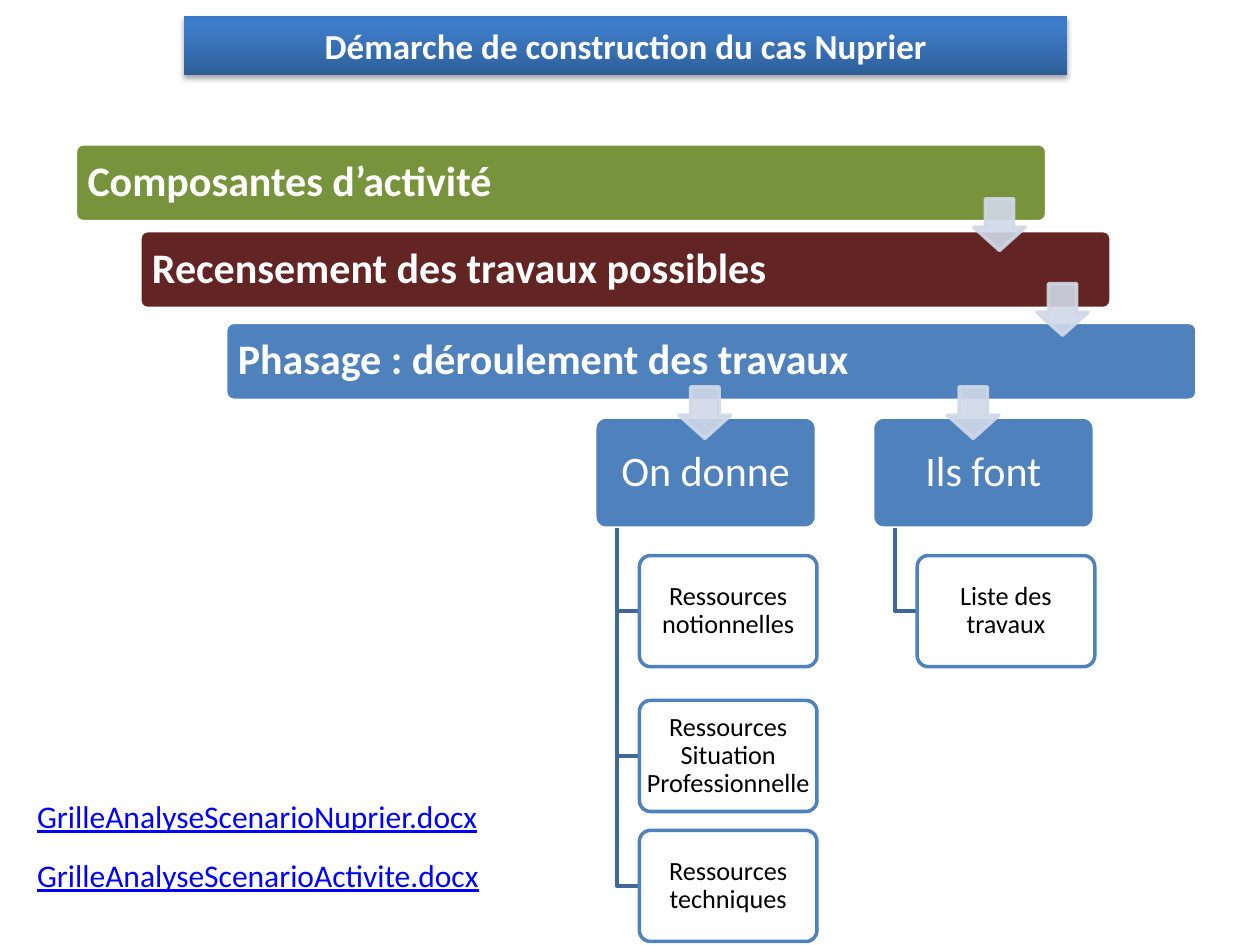
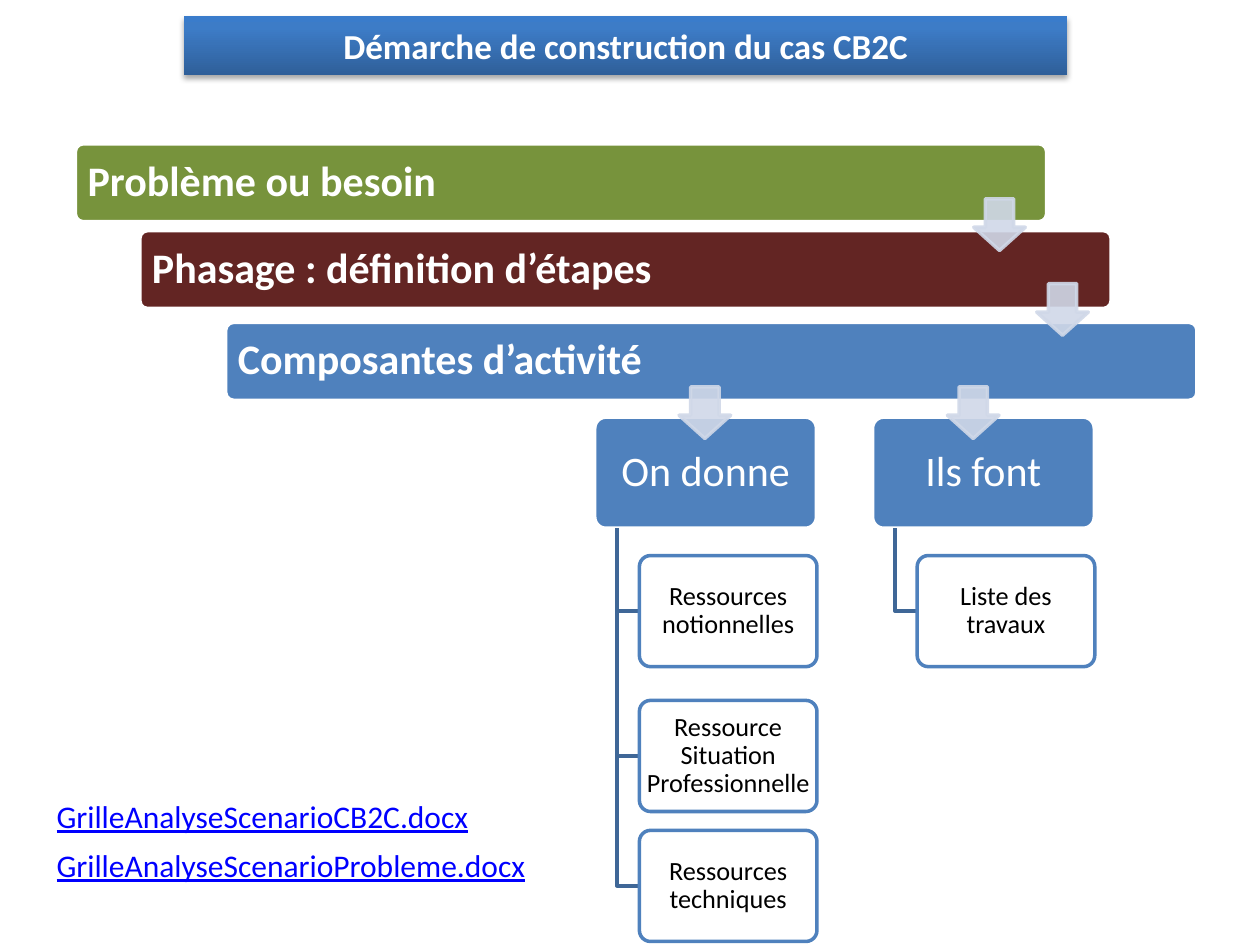
"""Two slides showing the steps for building a teaching case."""
from lxml import etree
from pptx import Presentation, util as u
from pptx.dml.color import RGBColor
from pptx.enum import shapes, text
from pptx.oxml import ns

PAGES = [
    {
        "title": "Démarche de construction du cas Nuprier",
        "steps": ["Composantes d’activité", "Recensement des travaux possibles",
                  "Phasage : déroulement des travaux"],
        "situation": "Ressources Situation Professionnelle",
        "links": ["GrilleAnalyseScenarioNuprier.docx", "GrilleAnalyseScenarioActivite.docx"],
        "links_left": 0.5, "links_pitch": 1.19,
    },
    {
        "title": "Démarche de construction du cas CB2C",
        "steps": ["Problème ou besoin", "Phasage : définition d’étapes",
                  "Composantes d’activité"],
        "situation": "Ressource Situation Professionnelle",
        "links": ["GrilleAnalyseScenarioCB2C.docx", "GrilleAnalyseScenarioProbleme.docx"],
        "links_left": 0.89, "links_pitch": 0.99,
    },
]


def branches(situation):
    return [("On donne", ["Ressources notionnelles", situation, "Ressources techniques"]),
            ("Ils font", ["Liste des travaux"])]


class Theme:
    font = "Calibri"
    white, black, link = "FFFFFF", "000000", "0000FF"
    blue, elbow, arrow = "4F81BD", "3F6797", "D0D8E8"
    steps = ["77933C", "632523", "4F81BD"]
    title_stops = [(0, "2F5F99"), (80, "3D7CC7"), (100, "3A7CCB")]
    step_size, title_size, link_size, leaf_size = 24, 20, 18, 15
    line_width, opacity = 2, 90


TITLE = (3.71, 0.33, 17.81, 1.19)
STEP_PLACES = [(1.52, 2.9), (2.82, 4.65), (4.55, 6.5)]
STEP_SIZE = (19.58, 1.57)
ARROW_PLACES = [(19.63, 4.01), (20.9, 5.72), (13.69, 7.8), (19.1, 7.8)]
ARROW_SIZE = 1.04
HEAD_LEFT, HEAD_TOP, HEAD_PITCH = 11.99, 8.41, 5.6
HEAD_SIZE = (4.47, 2.24)
LEAF_TOPS = [11.2, 14.12, 16.74]
LEAF_SIZE = (3.58, 2.24)
LEAF_INDENT, TRUNK_INDENT = 0.9, 0.45
LINKS_TOP, LINK_SIZE = 15.93, (10, 1.03)
STEP_MARGIN = 0.2
KIND = shapes.MSO_SHAPE


def apply(target, values):
    for name, value in values.items():
        setattr(target, name, value)


def add_child(parent, tag, **attributes):
    return etree.SubElement(parent, ns.qn(tag), attributes)


def write(box, words, size, color, align="LEFT", bold=False, underline=False,
          margins=(0.25, 0.13), spacing=0.9, anchor="MIDDLE"):
    across, down = (u.Cm(margin) for margin in margins)
    apply(box.text_frame, {
        "word_wrap": True, "vertical_anchor": text.MSO_ANCHOR[anchor],
        "margin_left": across, "margin_right": across,
        "margin_top": down, "margin_bottom": down})
    para = box.text_frame.paragraphs[0]
    apply(para, {"alignment": text.PP_ALIGN[align], "line_spacing": spacing})
    span = para.add_run()
    span.text = words
    apply(span.font, {"name": Theme.font, "size": u.Pt(size), "bold": bold,
                      "underline": underline})
    span.font.color.rgb = RGBColor.from_string(color)


def outline(box, color):
    box.shadow.inherit = False
    box.line.color.rgb = RGBColor.from_string(color)
    box.line.width = u.Pt(Theme.line_width)


def add_box(page, kind, place, fill, line, adjustments, clear=()):
    box = page.shapes.add_shape(kind, *map(u.Cm, place))
    box.fill.solid()
    box.fill.fore_color.rgb = RGBColor.from_string(fill)
    outline(box, line)
    for index, value in enumerate(adjustments):
        box.adjustments[index] = value
    for part in clear:
        color = box.element.spPr.find(f"{part}/{ns.qn('a:srgbClr')}")
        add_child(color, "a:alpha", val=str(Theme.opacity * 1000))
    return box


FILL_PART = ns.qn("a:solidFill")
LINE_PART = f"{ns.qn('a:ln')}/{FILL_PART}"


def add_title(page, words):
    box = page.shapes.add_shape(KIND.RECTANGLE, *map(u.Cm, TITLE))
    box.line.fill.background()
    box.fill.gradient()
    box.fill.gradient_angle = 90
    box.shadow.inherit = False
    stops = box.element.spPr.find(f".//{ns.qn('a:gsLst')}")
    stops.clear()
    for position, color in Theme.title_stops:
        stop = add_child(stops, "a:gs", pos=str(position * 1000))
        add_child(stop, "a:srgbClr", val=color)
    effects = box.element.spPr.find(ns.qn("a:effectLst"))
    shadow = add_child(effects, "a:outerShdw", blurRad=str(u.Pt(3.1)), dist=str(u.Pt(1.8)),
                       dir="5400000", rotWithShape="0")
    add_child(add_child(shadow, "a:srgbClr", val=Theme.black), "a:alpha", val="35000")
    write(box, words, Theme.title_size, Theme.white, "CENTER", bold=True, spacing=1.0)


def add_steps(page, steps):
    for words, place, color in zip(steps, STEP_PLACES, Theme.steps):
        box = add_box(page, KIND.ROUNDED_RECTANGLE, place + STEP_SIZE, color, Theme.white, [0.1])
        write(box, words, Theme.step_size, Theme.white, bold=True,
              margins=(STEP_MARGIN, STEP_MARGIN))


def add_elbow(page, left, top, right, bottom):
    corners = [tuple(map(u.Cm, corner)) for corner in
               [(left, top), (left, bottom), (right, bottom)]]
    builder = page.shapes.build_freeform(*corners[0])
    builder.add_line_segments(corners[1:], close=False)
    elbow = builder.convert_to_shape()
    elbow.fill.background()
    outline(elbow, Theme.elbow)


def add_branch(page, left, name, leaves):
    head = add_box(page, KIND.ROUNDED_RECTANGLE, (left, HEAD_TOP) + HEAD_SIZE,
                   Theme.blue, Theme.white, [0.1])
    write(head, name, Theme.step_size, Theme.white, "CENTER", margins=(0.1, 0.08))
    leaf_left = left + LEAF_INDENT
    for words, top in zip(leaves, LEAF_TOPS):
        add_elbow(page, left + TRUNK_INDENT, HEAD_TOP + HEAD_SIZE[1],
                  leaf_left, top + LEAF_SIZE[1] / 2)
        leaf = add_box(page, KIND.ROUNDED_RECTANGLE, (leaf_left, top) + LEAF_SIZE,
                       Theme.white, Theme.blue, [0.1], [FILL_PART])
        write(leaf, words, Theme.leaf_size, Theme.black, "CENTER", margins=(0, 0))


def add_arrows(page):
    for place in ARROW_PLACES:
        add_box(page, KIND.DOWN_ARROW, place + (ARROW_SIZE, ARROW_SIZE), Theme.arrow,
                Theme.arrow, [0.55, 0.45], [FILL_PART, LINE_PART])


def add_links(page, links, left, pitch):
    for row, words in enumerate(links):
        place = (left, LINKS_TOP + row * pitch) + LINK_SIZE
        box = page.shapes.add_textbox(*map(u.Cm, place))
        write(box, words, Theme.link_size, Theme.link, underline=True, spacing=1.0, anchor="TOP")


def main():
    deck = Presentation()
    apply(deck, {"slide_width": u.Cm(25.4), "slide_height": u.Cm(19.05)})
    for content in PAGES:
        page = deck.slides.add_slide(deck.slide_layouts[6])
        add_steps(page, content["steps"])
        for column, (name, leaves) in enumerate(branches(content["situation"])):
            add_branch(page, HEAD_LEFT + column * HEAD_PITCH, name, leaves)
        add_arrows(page)
        add_title(page, content["title"])
        add_links(page, content["links"], content["links_left"], content["links_pitch"])
    deck.save("out.pptx")


if __name__ == "__main__":
    main()
